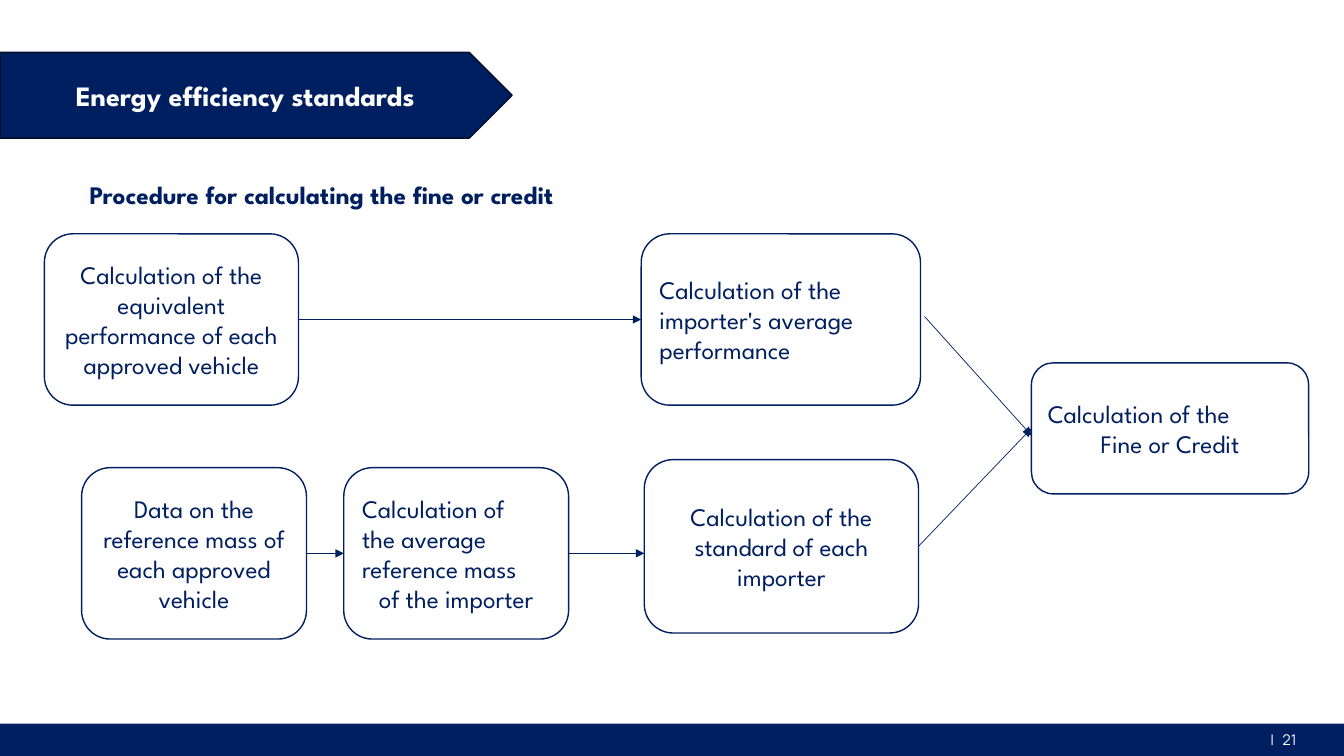
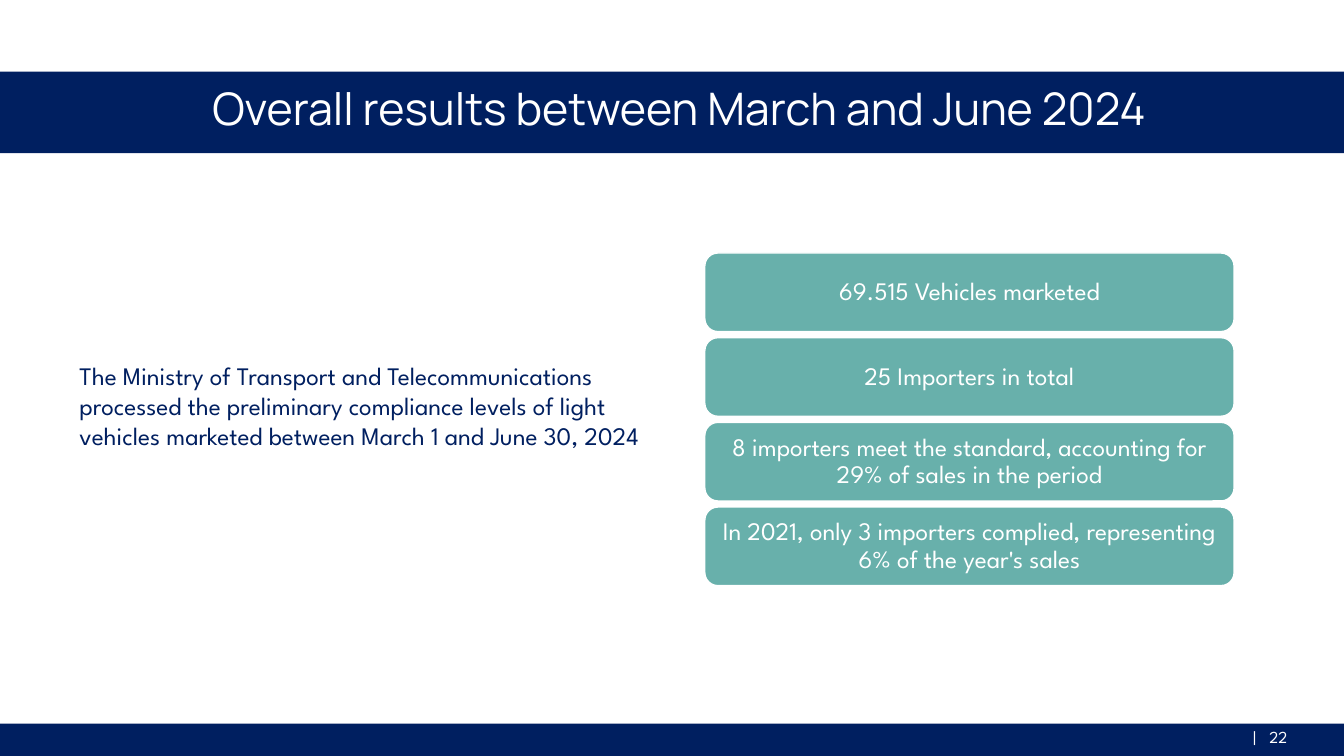
from lxml import etree
from pptx import Presentation
from pptx.dml.color import RGBColor
from pptx.enum import shapes, text
from pptx.oxml.ns import qn
from pptx.util import Inches, Pt

NAVY, NAVY_EDGE, TEAL, WHITE = "001F60", "000E2A", "68B0AB", "FFFFFF"
BODY_FONT, TITLE_FONT = "League Spartan", "Manrope"
PAGE_WIDTH, PAGE_HEIGHT = 13.33, 7.5
LEFT, CENTER = text.PP_ALIGN.LEFT, text.PP_ALIGN.CENTER
PRESET = shapes.MSO_SHAPE
SIDE_LEFT, SIDE_RIGHT = 1, 3


def color(hex_value):
    return RGBColor.from_string(hex_value)


def write(box, paragraphs, size=18, ink=NAVY, font=BODY_FONT, bold=False,
          align=CENTER, anchor=text.MSO_ANCHOR.MIDDLE, spacing=None, after=None):
    """Fill a box; a paragraph is a string or a (string, alignment) pair."""
    frame = box.text_frame
    frame.word_wrap = True
    frame.vertical_anchor = anchor
    for index, entry in enumerate(paragraphs):
        words, alignment = (entry, align) if isinstance(entry, str) else entry
        para = frame.paragraphs[0] if index == 0 else frame.add_paragraph()
        para.text = words
        para.alignment = alignment
        para.line_spacing = spacing
        if after is not None:
            para.space_after = Pt(after)
        para.font.size = Pt(size)
        para.font.name = font
        para.font.bold = bold
        para.font.color.rgb = color(ink)
    return box


def set_margins(box, inches):
    frame = box.text_frame
    frame.margin_left = frame.margin_right = Inches(inches)
    frame.margin_top = frame.margin_bottom = Inches(inches)


def add_box(page, preset, place, fill, line=None):
    box = page.shapes.add_shape(preset, *map(Inches, place))
    box.shadow.inherit = False
    box.fill.solid()
    box.fill.fore_color.rgb = color(fill)
    if line:
        box.line.color.rgb = color(line)
        box.line.width = Pt(1)
    else:
        box.line.fill.background()
    return box


def add_text(page, place, paragraphs, **style):
    return write(page.shapes.add_textbox(*map(Inches, place)), paragraphs, **style)


def add_step(page, place, *paragraphs, align=CENTER):
    box = add_box(page, PRESET.ROUNDED_RECTANGLE, place, WHITE, NAVY)
    return write(box, paragraphs, align=align)


def add_arrow(page, start, end):
    """Each end is a box, joined at its facing side, or an (x, y) point."""
    points = [point if isinstance(point, tuple) else (0, 0) for point in (start, end)]
    arrow = page.shapes.add_connector(
        shapes.MSO_CONNECTOR.STRAIGHT, *(Inches(v) for point in points for v in point))
    if not isinstance(start, tuple):
        arrow.begin_connect(start, SIDE_RIGHT)
    if not isinstance(end, tuple):
        arrow.end_connect(end, SIDE_LEFT)
    arrow.line.color.rgb = color(NAVY)
    arrow.line.width = Pt(0.5)
    etree.SubElement(arrow.line._get_or_add_ln(), qn("a:tailEnd"), type="triangle")
    etree.SubElement(arrow._element.spPr, qn("a:effectLst"))


def add_footer(page, number, place, gap, size, font):
    add_box(page, PRESET.RECTANGLE, (0, 7.18, PAGE_WIDTH, 0.32), NAVY)
    box = page.shapes.add_textbox(*map(Inches, place))
    set_margins(box, 0)
    # The tab stop sets the gap between the bar and the number
    properties = box.text_frame.paragraphs[0]._p.get_or_add_pPr()
    tabs = etree.SubElement(properties, qn("a:tabLst"))
    etree.SubElement(tabs, qn("a:tab"), pos=str(Inches(gap)), algn="l")
    write(box, [f"|\t{number}"], size=size, font=font, ink=WHITE, align=LEFT)


def build_procedure(page):
    add_footer(page, 21, (12.6, 7.17, 0.37, 0.33), 0.12, 10.5, TITLE_FONT)

    # Headings
    banner = add_box(page, PRESET.PENTAGON, (0, 0.52, 5.08, 0.85), NAVY, NAVY_EDGE)
    write(banner, ["Energy efficiency standards"], size=20, ink=WHITE, bold=True)
    add_text(page, (0.79, 1.73, 6.82, 0.4),
             ["Procedure for calculating the fine or credit"],
             bold=True, align=LEFT, anchor=text.MSO_ANCHOR.TOP)

    # Performance row
    equivalent = add_step(
        page, (0.44, 2.32, 2.52, 1.7),
        "Calculation of the equivalent performance of each approved vehicle")
    average = add_step(page, (6.36, 2.32, 2.77, 1.7),
                       "Calculation of the importer's average performance", align=LEFT)

    # Reference mass row
    mass_data = add_step(page, (0.81, 4.64, 2.23, 1.7),
                         "Data on the reference mass of each approved vehicle")
    average_mass = add_step(
        page, (3.41, 4.64, 2.23, 1.7), ("Calculation of", LEFT),
        ("the average reference mass", LEFT), "of the importer")
    standard = add_step(page, (6.39, 4.56, 2.72, 1.72),
                        "Calculation of the standard of each importer")

    # Result
    result = add_step(page, (10.23, 3.6, 2.75, 1.3),
                      ("Calculation of the", LEFT), "Fine or Credit")

    # Flow
    for start, end in [(equivalent, average), (mass_data, average_mass),
                       (average_mass, (6.39, 5.49)), (standard, result),
                       ((9.17, 3.14), (10.23, 4.32))]:
        add_arrow(page, start, end)


def build_results(page):
    add_footer(page, 22, (12.43, 7.14, 0.44, 0.33), 0.16, 12, BODY_FONT)

    # Title band
    add_box(page, PRESET.RECTANGLE, (0, 0.71, PAGE_WIDTH, 0.81), NAVY)
    add_text(page, (0.61, 0.7, 12.26, 0.81),
             ["Overall results between March and June 2024"],
             size=32, font=TITLE_FONT, ink=WHITE, spacing=0.9, after=6)

    # Introduction
    add_text(page, (0.69, 3.21, 5.84, 1.62),
             ["The Ministry of Transport and Telecommunications processed the "
              "preliminary compliance levels of light vehicles marketed between "
              "March 1 and June 30, 2024"], align=LEFT)

    # Key figures
    findings = [
        "69.515 Vehicles marketed",
        "25 Importers in total",
        "8 importers meet the standard, accounting for 29% of sales in the period",
        "In 2021, only 3 importers complied, representing 6% of the year's sales",
    ]
    for row, finding in enumerate(findings):
        card = add_box(page, PRESET.ROUNDED_RECTANGLE,
                       (6.99, 2.51 + 0.84 * row, 5.25, 0.78), TEAL, WHITE)
        set_margins(card, 0.07)
        write(card, [finding], ink=WHITE, spacing=0.9)


def main():
    deck = Presentation()
    deck.slide_width = Inches(PAGE_WIDTH)
    deck.slide_height = Inches(PAGE_HEIGHT)
    blank = deck.slide_layouts[6]
    for build in (build_procedure, build_results):
        build(deck.slides.add_slide(blank))
    deck.save("out.pptx")


if __name__ == "__main__":
    main()
